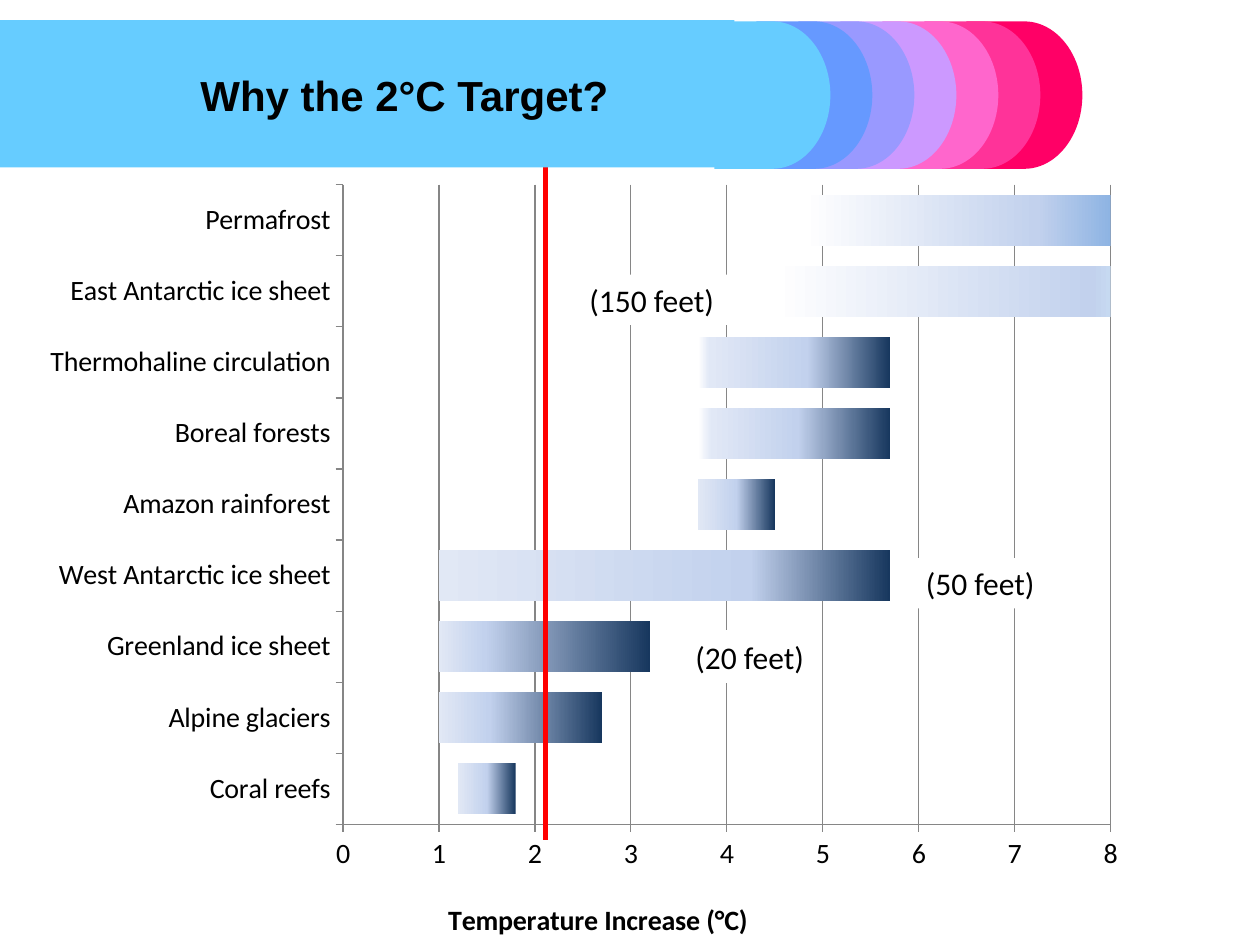
from lxml import etree
from pptx import Presentation
from pptx.chart.data import CategoryChartData
from pptx.dml.color import RGBColor
from pptx.enum.chart import XL_CHART_TYPE, XL_TICK_MARK
from pptx.enum.shapes import MSO_CONNECTOR, MSO_SHAPE
from pptx.enum.text import MSO_ANCHOR, PP_ALIGN
from pptx.oxml.ns import qn
from pptx.util import Inches, Pt

STACKED = XL_CHART_TYPE.BAR_STACKED
OUT = XL_TICK_MARK.OUTSIDE
STRAIGHT = MSO_CONNECTOR.STRAIGHT
RECT = MSO_SHAPE.RECTANGLE
DELAY = MSO_SHAPE.FLOWCHART_DELAY
MIDDLE = MSO_ANCHOR.MIDDLE
LEFT, CENTER = PP_ALIGN.LEFT, PP_ALIGN.CENTER

BLACK = RGBColor(0x00, 0x00, 0x00)
WHITE = RGBColor(0xFF, 0xFF, 0xFF)
RED = RGBColor(0xFF, 0x00, 0x00)
GRAY = RGBColor(0x86, 0x86, 0x86)
SKY = RGBColor(0x66, 0xCC, 0xFF)
FANS = [
    RGBColor(0xFF, 0x00, 0x66),
    RGBColor(0xFF, 0x33, 0x99),
    RGBColor(0xFF, 0x66, 0xCC),
    RGBColor(0xCC, 0x99, 0xFF),
    RGBColor(0x99, 0x99, 0xFF),
    RGBColor(0x66, 0x99, 0xFF),
    SKY,
]
NAVY = RGBColor(0x17, 0x37, 0x5E)
STEEL = RGBColor(0x8E, 0xB4, 0xE3)
MIST = RGBColor(0xC6, 0xD9, 0xF1)
PALE = RGBColor(0xC2, 0xD1, 0xED)
ICE = RGBColor(0xE1, 0xE8, 0xF5)
FROST = RGBColor(0xE1, 0xE8, 0xF6)

RISKS = [
    ("Coral reefs", 1.2, 0.6),
    ("Alpine glaciers", 1, 1.7),
    ("Greenland ice sheet", 1, 2.2),
    ("West Antarctic ice sheet", 1, 4.7),
    ("Amazon rainforest", 3.7, 0.8),
    ("Boreal forests", 3.7, 2),
    ("Thermohaline circulation", 3.7, 2),
    ("East Antarctic ice sheet", 4.5, 3.5),
    ("Permafrost", 4.8, 3.2),
]
BASE = [(0, NAVY), (50, PALE), (100, ICE)]
FADES = {
    1: [(0, NAVY), (69, PALE), (100, ICE)],
    2: [(0, NAVY), (78, PALE), (100, ICE)],
    3: [(0, NAVY), (31, PALE), (100, ICE)],
    5: [(0, NAVY), (48, PALE), (93, FROST), (100, WHITE)],
    6: [(0, NAVY), (43, PALE), (94, FROST), (100, WHITE)],
    7: [(0, MIST), (6, PALE), (100, WHITE)],
    8: [(0, STEEL), (24, PALE), (100, WHITE)],
}
NOTES = [
    ("(20 feet)", 5.42, 5, 1.08, 0.42),
    ("(50 feet)", 7.25, 4.43, 1.08, 0.4),
    ("(150 feet)", 4.58, 2.18, 1.25, 0.4),
]


def place(node, index, **parts):
    for old in node.findall(qn("c:layout")):
        node.remove(old)
    layout = etree.Element(qn("c:layout"))
    manual = etree.SubElement(layout, qn("c:manualLayout"))
    for tag, value in parts.items():
        etree.SubElement(manual, qn(f"c:{tag}")).set("val", str(value))
    node.insert(index, layout)


def blend(holder, stops):
    for fade, steps in zip(holder.iter(qn("a:gsLst")), stops):
        for old in list(fade):
            fade.remove(old)
        for spot, color in steps:
            stop = etree.SubElement(fade, qn("a:gs"), pos=str(spot * 1000))
            etree.SubElement(stop, qn("a:srgbClr"), val=str(color))


class Board:
    def __init__(self, slide, font, color):
        self.slide = slide
        self.font = font
        self.color = color

    def style(self, font, size, bold=False, name=None):
        font.name = name or self.font
        font.size = Pt(size)
        font.bold = bold
        font.color.rgb = self.color

    def shape(self, kind, x, y, w, h, fill):
        box = self.slide.shapes.add_shape(
            kind, Inches(x), Inches(y), Inches(w), Inches(h))
        box.shadow.inherit = False
        box.fill.solid()
        box.fill.fore_color.rgb = fill
        box.line.fill.background()
        return box

    def label(self, box, text, size, align, bold=False, name=None):
        frame = box.text_frame
        frame.word_wrap = True
        frame.vertical_anchor = MIDDLE
        para = frame.paragraphs[0]
        para.text = text
        para.alignment = align
        self.style(para.font, size, bold, name)

    def note(self, text, x, y, w, h):
        self.label(self.shape(RECT, x, y, w, h, WHITE), text, 18, LEFT)

    def title(self, text, x, y, w, h):
        box = self.slide.shapes.add_textbox(
            Inches(x), Inches(y), Inches(w), Inches(h))
        self.label(box, text, 24, CENTER, True, "Arial")

    def line(self, x, top, end, color, width):
        link = self.slide.shapes.add_connector(
            STRAIGHT, Inches(x), Inches(top), Inches(x), Inches(end))
        link.line.color.rgb = color
        link.line.width = Pt(width)
        etree.SubElement(link._element.spPr, qn("a:effectLst"))

    def chart(self, x, y, w, h):
        names, starts, spans = zip(*RISKS)
        data = CategoryChartData()
        data.categories = names
        data.add_series("Series 1", starts)
        data.add_series("Series 2", spans)
        chart = self.slide.shapes.add_chart(
            STACKED, Inches(x), Inches(y), Inches(w), Inches(h), data).chart
        chart.has_legend = False
        chart.has_title = False
        self.style(chart.font, 10)
        place(chart._chartSpace.chart.plotArea, 0, layoutTarget="inner",
              xMode="edge", yMode="edge", x=0.28, y=0.02, w=0.69, h=0.81)
        self.axes(chart)
        self.bars(chart.plots[0])

    def axes(self, chart):
        scale = chart.value_axis
        for axis in (chart.category_axis, scale):
            axis.major_tick_mark = OUT
            axis.format.line.color.rgb = GRAY
            self.style(axis.tick_labels.font, 16)
        scale.minimum_scale = 0
        scale.maximum_scale = 8
        scale.major_unit = 1
        scale.has_major_gridlines = True
        scale.major_gridlines.format.line.color.rgb = GRAY
        title = scale.axis_title
        para = title.text_frame.paragraphs[0]
        para.text = "Temperature Increase (°C)"
        self.style(para.font, 16, True)
        place(title._element, 1, xMode="edge", yMode="edge", x=0.37, y=0.92)

    def bars(self, plot):
        plot.vary_by_categories = False
        plot.gap_width = 40
        plot.overlap = 100
        start, span = plot.series
        start.format.fill.background()
        span.invert_if_negative = False
        for part in [span, *(span.points[i] for i in FADES)]:
            part.format.fill.gradient()
            part.format.fill.gradient_angle = 180
        blend(span._element, [BASE, *FADES.values()])


def main():
    deck = Presentation()
    deck.slide_width = Inches(10)
    deck.slide_height = Inches(7.5)
    board = Board(deck.slides.add_slide(deck.slide_layouts[6]),
                  "Calibri", BLACK)
    board.chart(0.25, 1.34, 8.83, 6.27)
    board.line(4.33, 1.25, 6.67, RED, 3)
    for note in NOTES:
        board.note(*note)
    for i, color in enumerate(FANS):
        board.shape(DELAY, 7.67 - i / 3, 0.17, 0.92, 1.17, color)
    board.shape(RECT, 0, 0.16, 5.83, 1.17, SKY)
    board.title("Why the 2°C Target?", 1, 0.5, 4.42, 0.5)
    deck.save("out.pptx")


if __name__ == "__main__":
    main()
